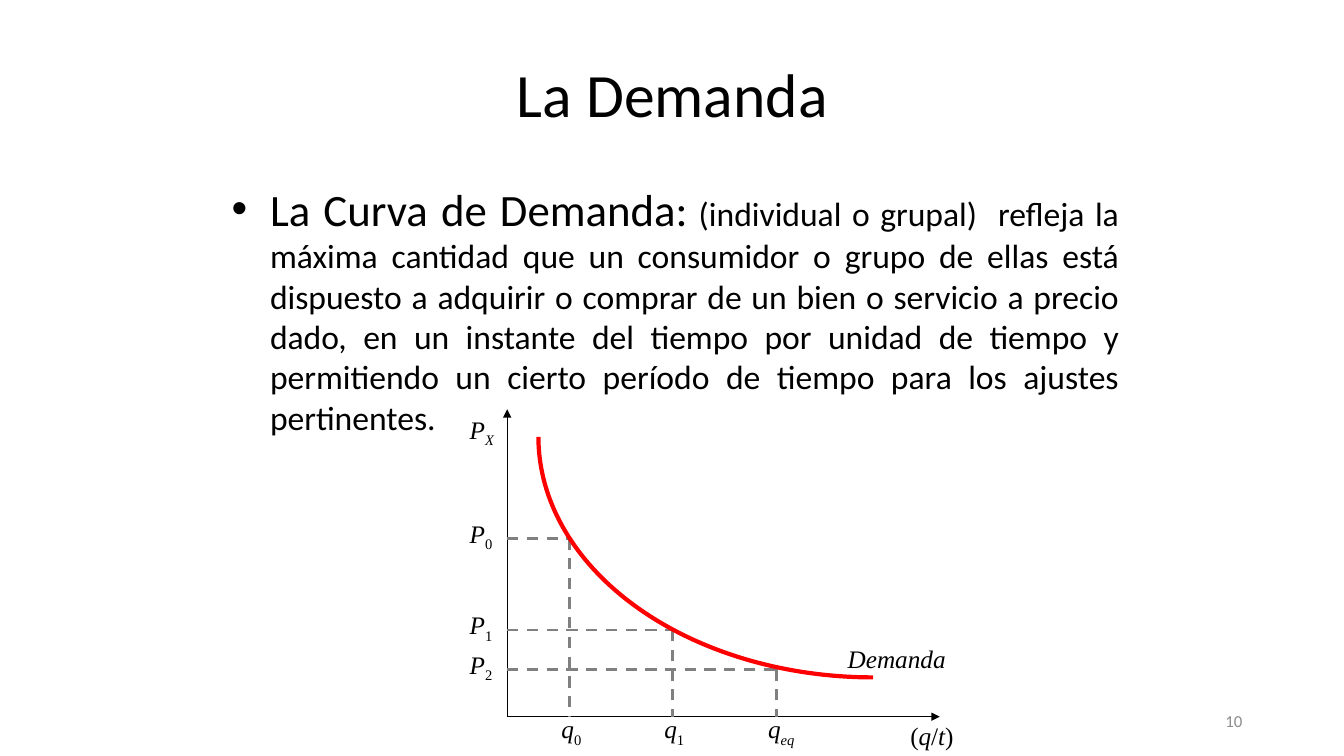
"""Build the slide on the demand curve."""
from dataclasses import dataclass

from lxml.etree import SubElement
from pptx import Presentation
from pptx.dml.color import RGBColor
from pptx.enum.dml import MSO_LINE
from pptx.enum.shapes import MSO_CONNECTOR, MSO_SHAPE
from pptx.enum.text import MSO_ANCHOR, PP_ALIGN
from pptx.oxml.ns import qn
from pptx.util import Inches, Pt

COLORS = {"text": "000000", "axis": "000000", "guide": "808080",
          "curve": "FF0000", "number": "8C8C8C"}
CELL = Inches(0.1)
COLS, ROWS = 133.3, 75
AXIS_X, AXIS_Y = 50.3, 71.1
SANS = {"name": "Calibri"}
SERIF = {"name": "Times New Roman", "size": Pt(18)}


@dataclass
class Run:
    text: str
    italic: bool = False
    sub: bool = False


@dataclass
class Label:
    col: float
    row: float
    width: float
    runs: list[Run]


@dataclass
class Line:
    start: tuple[float, float]
    end: tuple[float, float]
    color: str = "guide"
    width: float = 2
    arrow: bool = False


@dataclass
class Point:
    col: float
    row: float
    price: str
    quantity: str


def grid(*cells: float) -> list[int]:
    """Turn grid cells into slide lengths."""
    return [round(c * CELL) for c in cells]


def set_all(obj, values: dict) -> None:
    """Set every attribute named in values."""
    for name, value in values.items():
        setattr(obj, name, value)


def add_run(p, text: str, values: dict, color: str = "text"):
    """Append a formatted run to a paragraph."""
    r = p.add_run()
    r.text = text
    set_all(r.font, values)
    r.font.color.rgb = RGBColor.from_string(COLORS[color])
    return r


def add_box(shapes, box: tuple, anchor=MSO_ANCHOR.TOP, align=PP_ALIGN.LEFT):
    """Add a text box and return its first paragraph."""
    tf = shapes.add_textbox(*grid(*box)).text_frame
    set_all(tf, {"word_wrap": True, "vertical_anchor": anchor})
    tf.paragraphs[0].alignment = align
    return tf.paragraphs[0]


def add_label(shapes, label: Label) -> None:
    """Draw one diagram label."""
    p = add_box(shapes, (label.col, label.row, label.width, 4))
    for run in label.runs:
        r = add_run(p, run.text, SERIF | {"italic": run.italic})
        if run.sub:
            r.font._element.set("baseline", "-25000")


def add_line(shapes, line: Line) -> None:
    """Draw an axis with an arrowhead or a dashed guide."""
    sp = shapes.add_connector(MSO_CONNECTOR.STRAIGHT, *grid(*line.start, *line.end))
    sp.line.width = Pt(line.width)
    sp.line.color.rgb = RGBColor.from_string(COLORS[line.color])
    if line.arrow:
        SubElement(sp.line._get_or_add_ln(), qn("a:tailEnd"), type="triangle")
    else:
        sp.line.dash_style = MSO_LINE.DASH
    SubElement(sp._element.spPr, qn("a:effectLst"))


def add_title(s) -> None:
    """Place and format the title."""
    sp = s.shapes.title
    set_all(sp, dict(zip(("left", "top", "width", "height"), grid(21.7, 3, 90, 12.5))))
    sp.text_frame.vertical_anchor = MSO_ANCHOR.MIDDLE
    p = sp.text_frame.paragraphs[0]
    p.alignment = PP_ALIGN.CENTER
    add_run(p, "La Demanda", SANS | {"size": Pt(44)})


def add_definition(shapes) -> None:
    """Write the bulleted definition."""
    p = add_box(shapes, (22, 17.5, 90, 49.5), align=PP_ALIGN.JUSTIFY)
    pPr = p._p.get_or_add_pPr()
    indent = Inches(0.38)
    pPr.set("marL", str(indent))
    pPr.set("indent", str(-indent))
    SubElement(pPr, qn("a:buFont"), typeface="Arial")
    SubElement(pPr, qn("a:buChar"), char="•")
    add_run(p, "La Curva de Demanda:", SANS | {"size": Pt(32)})
    add_run(p, " (individual o grupal)  refleja la máxima cantidad que un consumidor "
            "o grupo de ellas está dispuesto a adquirir o comprar de un bien o servicio "
            "a precio dado, en un instante del tiempo por unidad de tiempo y permitiendo "
            "un cierto período de tiempo para los ajustes pertinentes.",
            SANS | {"size": Pt(24)})


def add_curve(shapes) -> None:
    """Draw the demand curve as a quarter ellipse."""
    sp = shapes.add_shape(MSO_SHAPE.ARC, *grid(53.4, 19.5, 66.4, 47.7))
    sp.rotation = 180
    sp.shadow.inherit = False
    sp.fill.background()
    sp.line.width = Pt(3)
    sp.line.color.rgb = RGBColor.from_string(COLORS["curve"])


def main() -> None:
    """Build and save the slide."""
    prs = Presentation()
    prs.slide_width, prs.slide_height = grid(COLS, ROWS)
    s = prs.slides.add_slide(prs.slide_layouts[5])
    shapes = s.shapes
    add_title(s)
    add_definition(shapes)
    p = add_box(shapes, (94.2, 69.5, 30, 4), MSO_ANCHOR.MIDDLE, PP_ALIGN.RIGHT)
    add_run(p, "10", SANS | {"size": Pt(12)}, "number")

    origin = (AXIS_X, AXIS_Y)
    points = [Point(56.5, 53.4, "0", "0"), Point(66.7, 62.5, "1", "1"),
              Point(77, 66.4, "2", "eq")]
    lines = [Line(origin, end, "axis", 0.75, True)
             for end in ((AXIS_X, 40.6), (93.2, AXIS_Y))]
    labels = [
        Label(45.6, 40.6, 4.7, [Run("P", True), Run("X", True, True)]),
        Label(83.1, 63.3, 15.7, [Run("Demanda", True)]),
        Label(89.3, 71, 7, [Run("("), Run("q", True), Run("/"), Run("t", True), Run(")")]),
    ]
    for pt in points:
        lines += [Line((AXIS_X, pt.row), (pt.col, pt.row)),
                  Line((pt.col, pt.row), (pt.col, AXIS_Y))]
        labels += [
            Label(45.6, pt.row - 2.5, 4.7, [Run("P", True), Run(pt.price, sub=True)]),
            Label(pt.col - 1.8, 70.3, 7,
                  [Run("q", True), Run(pt.quantity, pt.quantity.isalpha(), True)]),
        ]
    for line in lines:
        add_line(shapes, line)
    add_curve(shapes)
    for label in labels:
        add_label(shapes, label)
    prs.save("out.pptx")


if __name__ == "__main__":
    main()
